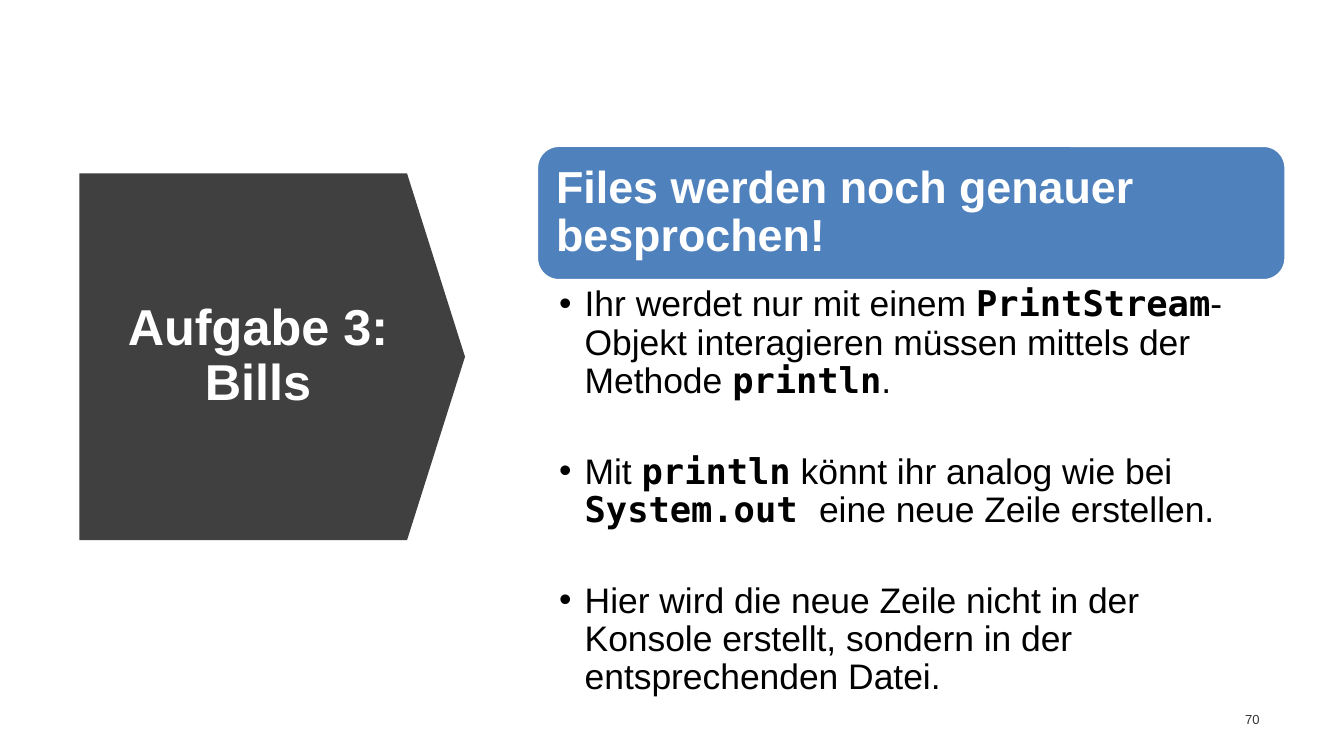
from dataclasses import dataclass

from pptx import Presentation
from pptx.dml.color import RGBColor
from pptx.enum.shapes import MSO_SHAPE
from pptx.enum.text import MSO_ANCHOR, MSO_AUTO_SIZE, PP_ALIGN
from pptx.util import Inches, Pt


@dataclass(frozen=True)
class Theme:
    """Colours, fonts and type sizes of the slide."""
    dark: str = "404040"
    accent: str = "4F81BD"
    light: str = "FFFFFF"
    text: str = "000000"
    muted: str = "333333"
    font: str = "Arial"
    code_font: str = "DejaVu Sans Mono"
    title_size: float = 27
    heading_size: float = 24
    body_size: float = 19
    number_size: float = 7


THEME = Theme()

BULLETS = [
    [("Ihr werdet nur mit einem ", False), ("PrintStream", True),
     ("-Objekt interagieren müssen mittels der Methode ", False),
     ("println", True), (".", False)],
    [("Mit ", False), ("println", True), (" könnt ihr analog wie bei ", False),
     ("System.out ", True), ("eine neue Zeile erstellen.", False)],
    [("Hier wird die neue Zeile nicht in der Konsole erstellt, "
      "sondern in der entsprechenden Datei.", False)],
]


def place(shape, left, top, width, height):
    """Move and size a shape, in inches."""
    shape.left, shape.top = Inches(left), Inches(top)
    shape.width, shape.height = Inches(width), Inches(height)


def prepare_frame(shape, anchor, left=0.1, top=0.05, right=0.1, bottom=0.05):
    """Set wrapping, anchor and insets of a text frame and return it."""
    frame = shape.text_frame
    frame.word_wrap = True
    frame.auto_size = MSO_AUTO_SIZE.NONE
    frame.vertical_anchor = anchor
    frame.margin_left, frame.margin_right = Inches(left), Inches(right)
    frame.margin_top, frame.margin_bottom = Inches(top), Inches(bottom)
    return frame


def format_paragraph(paragraph, alignment=PP_ALIGN.LEFT, space_after=0):
    """Set alignment and spacing of a paragraph."""
    paragraph.alignment = alignment
    paragraph.line_spacing = 0.9
    paragraph.space_before = Pt(0)
    paragraph.space_after = Pt(space_after)


def add_run(paragraph, text, size, color, bold=False, font=THEME.font):
    """Append one formatted run to a paragraph."""
    run = paragraph.add_run()
    run.text = text
    run.font.name = font
    run.font.size = Pt(size)
    run.font.bold = bold
    run.font.color.rgb = RGBColor.from_string(color)


def add_filled_shape(slide, preset, box, color):
    """Add a flat preset shape with a solid fill."""
    shape = slide.shapes.add_shape(preset, *map(Inches, box))
    shape.shadow.inherit = False
    shape.fill.solid()
    shape.fill.fore_color.rgb = RGBColor.from_string(color)
    shape.line.fill.background()
    return shape


def build_title_arrow(slide, left, top, width, height):
    """Place the dark arrow with the slide title on it."""
    arrow = add_filled_shape(slide, MSO_SHAPE.PENTAGON,
                             (left, top, width, height), THEME.dark)
    arrow.adjustments[0] = 0.158
    title = slide.shapes.title
    title._element.addprevious(arrow._element)
    place(title, left + 0.25, top + 0.32, 2.16, height - 0.64)
    frame = prepare_frame(title, MSO_ANCHOR.MIDDLE)
    paragraph = frame.paragraphs[0]
    format_paragraph(paragraph, PP_ALIGN.CENTER)
    add_run(paragraph, "Aufgabe 3: Bills", THEME.title_size, THEME.light, bold=True)


def build_content(slide, left, top, width, height):
    """Place the heading card and the bullet list below it."""
    card_height = 1.01
    card = add_filled_shape(slide, MSO_SHAPE.ROUNDED_RECTANGLE,
                            (left, top, width, card_height), THEME.accent)
    card.line.color.rgb = RGBColor.from_string(THEME.light)
    card.line.width = Pt(2)
    frame = prepare_frame(card, MSO_ANCHOR.MIDDLE)
    heading = frame.paragraphs[0]
    format_paragraph(heading)
    add_run(heading, "Files werden noch genauer besprochen!",
            THEME.heading_size, THEME.light, bold=True)

    body = slide.placeholders[1]
    place(body, left, top + card_height, width, height - card_height)
    frame = prepare_frame(body, MSO_ANCHOR.TOP, 0.17, 0.04, 0.19, 0.03)
    for index, parts in enumerate(BULLETS):
        paragraph = frame.add_paragraph() if index else frame.paragraphs[0]
        format_paragraph(paragraph, space_after=28)
        properties = paragraph._p.get_or_add_pPr()
        properties.set("marL", str(Inches(0.19)))
        properties.set("indent", str(-Inches(0.19)))
        for text, is_code in parts:
            add_run(paragraph, text, THEME.body_size, THEME.text, is_code,
                    THEME.code_font if is_code else THEME.font)


def build_slide_number(slide, left, top, width, height):
    """Place the slide number."""
    box = slide.shapes.add_textbox(*map(Inches, (left, top, width, height)))
    paragraph = prepare_frame(box, MSO_ANCHOR.MIDDLE).paragraphs[0]
    format_paragraph(paragraph, PP_ALIGN.RIGHT)
    add_run(paragraph, "70", THEME.number_size, THEME.muted)


def main():
    """Build the slide and save it."""
    presentation = Presentation()
    presentation.slide_width = Inches(10)
    presentation.slide_height = presentation.slide_width * 9 // 16
    slide = presentation.slides.add_slide(presentation.slide_layouts[1])
    build_title_arrow(slide, 0.59, 1.29, 2.87, 2.73)
    build_content(slide, 3.99, 1.08, 5.58, 4.12)
    build_slide_number(slide, 9.05, 5.21, 0.42, 0.3)
    presentation.save("out.pptx")


if __name__ == "__main__":
    main()
